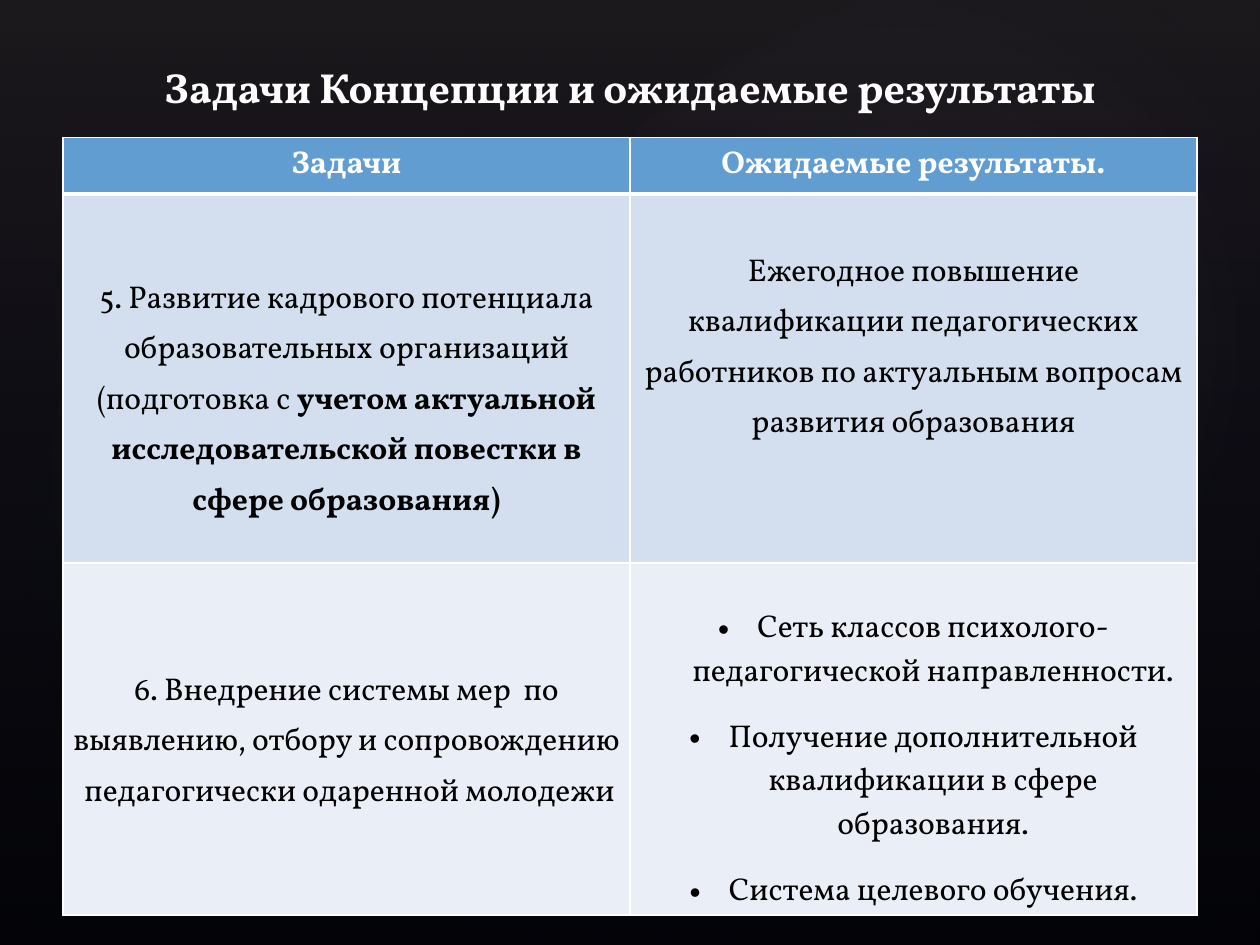
import pptx
import pptx.util
import pptx.dml.color
import pptx.enum.shapes
import pptx.enum.text
import pptx.oxml
import pptx.oxml.ns

Cm, Pt = pptx.util.Cm, pptx.util.Pt
NS = pptx.oxml.ns.nsdecls("a")
SHAPE = pptx.enum.shapes.MSO_SHAPE
COLORS = {"back": "000000", "white": "FFFFFF", "text": "000000", "header": "629DD1",
          "task": "D3DFEE", "task_light": "EAEFF7",
          "plum": "504652", "navy": "242852", "mist": "C4BCC6"}
FONT = "Vollkorn"

# Each cell: top margin (cm), line spacing, gap between paragraphs (pt), bullets, paragraphs of (text, bold) runs
ROWS = [
    [dict(top=1.57, spacing=1.15, paras=[
        [("5. Развитие кадрового потенциала образовательных организаций", False)],
        [("(подготовка с ", False),
         ("учетом актуальной исследовательской повестки в сфере образования)", True)]]),
     dict(top=1.02, spacing=1.15, paras=[
         [("Ежегодное повышение квалификации педагогических работников "
           "по актуальным вопросам развития образования", False)]])],
    [dict(top=2.03, spacing=1.15, paras=[
        [("6. Внедрение системы мер  по выявлению, отбору и сопровождению  "
          "педагогически одаренной молодежи", False)]]),
     dict(top=0.89, spacing=1, gap=12.6, bullets=True, paras=[
         [("Сеть классов психолого-педагогической направленности.", False)],
         [("Получение дополнительной квалификации в сфере образования.", False)],
         [("Система целевого обучения.", False)]])],
]


def rgb(name):
    return pptx.dml.color.RGBColor.from_string(COLORS[name])


def add_run(p, text, color, size=18, bold=False):
    r = p.add_run()
    r.text = text
    for key, value in dict(name=FONT, size=Pt(size), bold=bold).items():
        setattr(r.font, key, value)
    r.font.color.rgb = rgb(color)


def add_glow(slide, kind, box, stops, direction, rotation=0):
    """Shape filled with a gradient of (position %, colour, opacity %) stops."""
    sp = slide.shapes.add_shape(kind, *map(Cm, box))
    sp.rotation = rotation
    sp.shadow.inherit = False
    sp.line.fill.background()
    gs = "".join(f'<a:gs pos="{pos * 1000}"><a:srgbClr val="{COLORS[color]}">'
                 f'<a:alpha val="{alpha * 1000}"/></a:srgbClr></a:gs>'
                 for pos, color, alpha in stops)
    fill = pptx.oxml.parse_xml(f'<a:gradFill {NS} rotWithShape="1"><a:gsLst>{gs}</a:gsLst>'
                               f'{direction}</a:gradFill>')
    sp._element.spPr.insert(2, fill)


def add_backdrop(slide, box):
    left, top, width, height = box
    slide.background.fill.solid()
    slide.background.fill.fore_color.rgb = rgb("back")
    add_glow(slide, SHAPE.RECTANGLE, box, [(0, "plum", 36), (100, "navy", 10)],
             '<a:lin ang="5400000" scaled="0"/>')
    radial = ('<a:path path="circle"><a:fillToRect l="50000" t="50000" '
              'r="50000" b="50000"/></a:path>')
    for x, y, w, h, rotation, alpha in [(3.81, 2.9, 20.12, 15.85, 328.7, 7),
                                        (-0.76, 3.25, 15.39, 12.45, 294.3, 8),
                                        (9.09, 0.33, 18.01, 13.21, 328.7, 8)]:
        add_glow(slide, SHAPE.OVAL, (left + x, top + y, w, h),
                 [(0, "mist", alpha), (58, "navy", 0)], radial, rotation)


def add_title(slide, box, text):
    tf = slide.shapes.add_textbox(*map(Cm, box)).text_frame
    tf.word_wrap = True
    tf.vertical_anchor = pptx.enum.text.MSO_ANCHOR.BOTTOM
    p = tf.paragraphs[0]
    p.alignment = pptx.enum.text.PP_ALIGN.CENTER
    add_run(p, text, "white", 24, True)


def style_cell(cell, fill, bottom=1, top=1):
    tcPr = cell._tc.get_or_add_tcPr()
    for side, width in dict(L=1, R=1, T=top, B=bottom).items():
        tcPr.append(pptx.oxml.parse_xml(
            f'<a:ln{side} {NS} w="{Pt(width)}"><a:solidFill>'
            f'<a:srgbClr val="{COLORS["white"]}"/></a:solidFill></a:ln{side}>'))
    cell.fill.solid()
    cell.fill.fore_color.rgb = rgb(fill)


def fill_cell(cell, top, spacing, paras, gap=0, bullets=False):
    margins = dict(margin_left=0.17, margin_right=0.17, margin_top=top, margin_bottom=0)
    for key, value in margins.items():
        setattr(cell, key, Cm(value))
    tf = cell.text_frame
    for i, runs in enumerate(paras):
        p = tf.add_paragraph() if i else tf.paragraphs[0]
        p.alignment = pptx.enum.text.PP_ALIGN.CENTER
        p.line_spacing = spacing
        if i and gap:
            p.space_before = Pt(gap)
        if bullets:
            pPr = p._p.get_or_add_pPr()
            pPr.set("marL", str(Cm(0.79)))
            pPr.set("indent", str(-Cm(0.79)))
            pPr.append(pptx.oxml.parse_xml(f'<a:buFont {NS} typeface="Arial"/>'))
            pPr.append(pptx.oxml.parse_xml(f'<a:buChar {NS} char="•"/>'))
        for text, bold in runs:
            add_run(p, text, "text", bold=bold)


def add_task_table(slide, box, headers, rows, heights):
    table = slide.shapes.add_table(len(rows) + 1, len(headers), *map(Cm, box)).table
    for column in table.columns:
        column.width = Cm(box[2] / len(headers))
    for row, height in zip(table.rows, heights):
        row.height = Cm(height)
    # Header row
    for cell, text in zip(table.rows[0].cells, headers):
        style_cell(cell, "header", bottom=3)
        p = cell.text_frame.paragraphs[0]
        p.alignment = pptx.enum.text.PP_ALIGN.CENTER
        add_run(p, text, "white", bold=True)
    # Task rows
    for i, row in enumerate(rows):
        for cell, content in zip(table.rows[i + 1].cells, row):
            style_cell(cell, ("task", "task_light")[i % 2], top=1 if i else 3)
            fill_cell(cell, **content)


def main():
    prs = pptx.Presentation()
    prs.slide_width, prs.slide_height = Cm(25.4), Cm(19.05)
    slide = prs.slides.add_slide(prs.slide_layouts[6])
    add_backdrop(slide, (0, 0, 25.4, 19.05))
    add_task_table(slide, (1.27, 2.77, 22.86, 15.39),
                   ["Задачи", "Ожидаемые результаты."], ROWS, [1.09, 7.44, 6.86])
    add_title(slide, (1.27, 0.79, 22.86, 1.6), "Задачи Концепции и ожидаемые результаты")
    prs.save("out.pptx")


if __name__ == "__main__":
    main()
